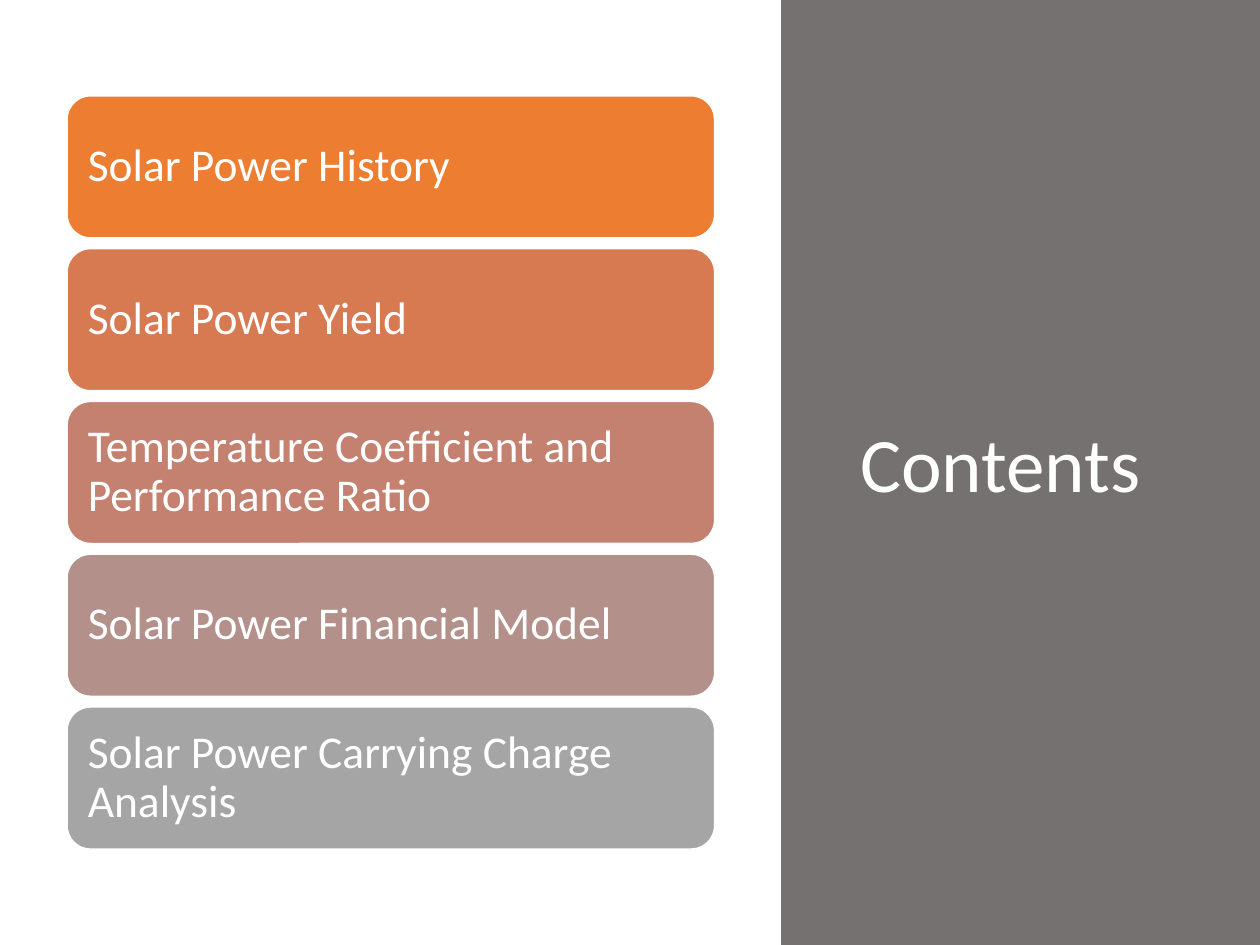
from dataclasses import dataclass

from pptx import Presentation
from pptx import util as u
from pptx.dml.color import RGBColor
from pptx.enum import shapes, text


@dataclass(frozen=True)
class Theme:
    font: str = "Calibri"
    light: str = "FFFFFF"
    panel: str = "767171"
    topic_fills: tuple = ("ED7D31", "D87A51", "C48170", "B4908B", "A5A5A5")
    topic_size: int = 26
    title_size: int = 44


THEME = Theme()

TOPICS = (
    "Solar Power History",
    "Solar Power Yield",
    "Temperature Coefficient and Performance Ratio",
    "Solar Power Financial Model",
    "Solar Power Carrying Charge Analysis",
)

# Topic stack, in centimetres
STACK_LEFT, STACK_TOP = 1.35, 1.93
TOPIC_WIDTH, TOPIC_HEIGHT, TOPIC_PITCH = 13.06, 2.87, 3.08
TOPIC_INSET = 0.28


def apply_format(target, values):
    for name, value in values.items():
        setattr(target, name, value)


def box(left, top, width, height):
    return [u.Cm(length) for length in (left, top, width, height)]


def write_text(holder, wording, size, inset=None):
    frame = holder.text_frame
    apply_format(frame, {
        "word_wrap": True,
        "vertical_anchor": text.MSO_ANCHOR.MIDDLE,
    })
    if inset is not None:
        sides = ("left", "top", "right", "bottom")
        apply_format(frame, {f"margin_{side}": u.Cm(inset) for side in sides})
    line = frame.paragraphs[0]
    apply_format(line, {"alignment": text.PP_ALIGN.LEFT, "line_spacing": 0.9})
    run = line.add_run()
    run.text = wording
    apply_format(run.font, {"name": THEME.font, "size": u.Pt(size)})
    run.font.color.rgb = RGBColor.from_string(THEME.light)


def add_block(slide, kind, bounds, fill):
    block = slide.shapes.add_shape(kind, *box(*bounds))
    block.shadow.inherit = False
    block.fill.solid()
    block.fill.fore_color.rgb = RGBColor.from_string(fill)
    block.line.fill.background()
    return block


def add_topic(slide, index, wording, fill):
    bounds = (STACK_LEFT, STACK_TOP + index * TOPIC_PITCH, TOPIC_WIDTH, TOPIC_HEIGHT)
    topic = add_block(slide, shapes.MSO_SHAPE.ROUNDED_RECTANGLE, bounds, fill)
    topic.line.color.rgb = RGBColor.from_string(THEME.light)
    topic.line.width = u.Pt(1)
    write_text(topic, wording, THEME.topic_size, TOPIC_INSET)


def add_title(slide, wording):
    title = slide.shapes.add_textbox(*box(17.09, 1.78, 7.65, 15.29))
    write_text(title, wording, THEME.title_size)


def main():
    deck = Presentation()
    apply_format(deck, {"slide_width": u.Cm(25.4), "slide_height": u.Cm(19.05)})
    slide = deck.slides.add_slide(deck.slide_layouts[6])

    # Side panel
    add_block(slide, shapes.MSO_SHAPE.RECTANGLE, (15.75, 0, 9.65, 19.05), THEME.panel)

    # Stack of topics
    for index, (wording, fill) in enumerate(zip(TOPICS, THEME.topic_fills)):
        add_topic(slide, index, wording, fill)

    # Title on the panel
    add_title(slide, "Contents")

    deck.save("out.pptx")


if __name__ == "__main__":
    main()
